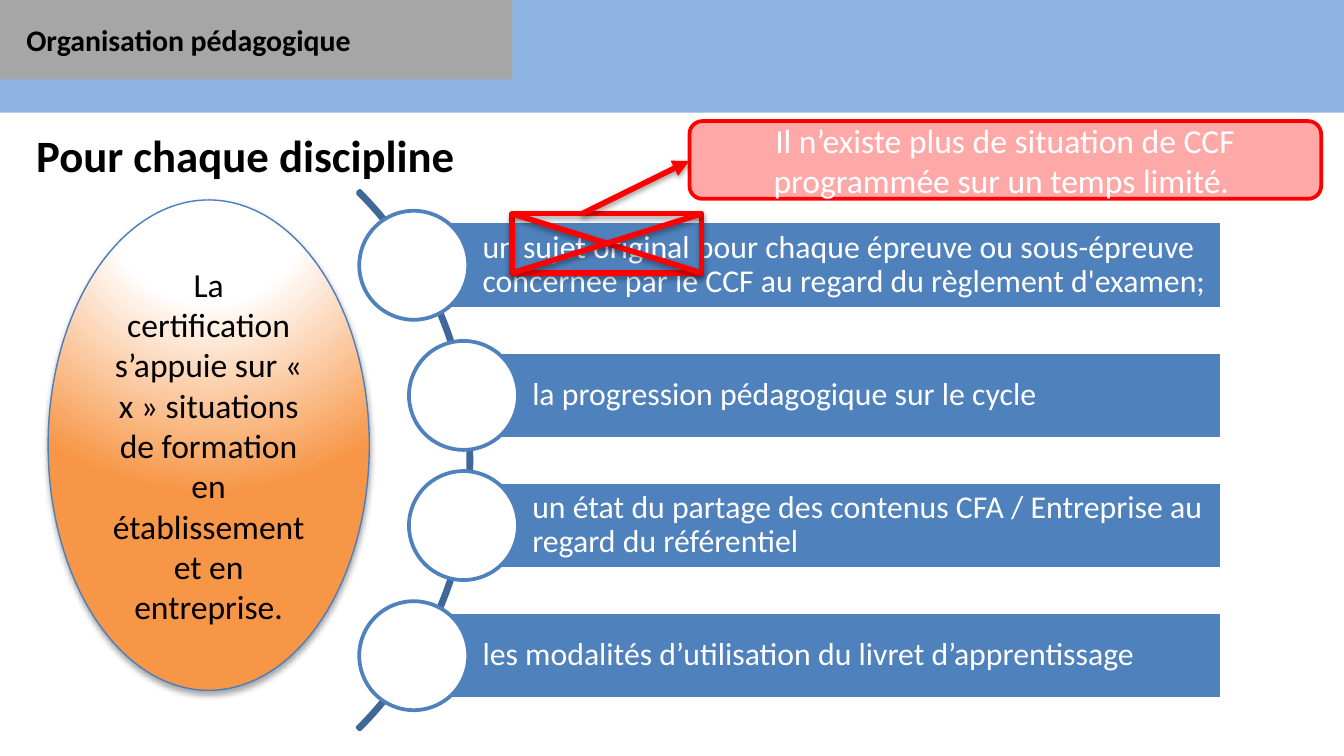
from lxml import etree
from pptx import Presentation
from pptx.dml.color import RGBColor
from pptx.enum.shapes import MSO_CONNECTOR, MSO_SHAPE
from pptx.enum.text import MSO_ANCHOR, MSO_AUTO_SIZE, PP_ALIGN
from pptx.oxml.ns import qn
from pptx.util import Cm, Pt

RECT, ROUNDED = MSO_SHAPE.RECTANGLE, MSO_SHAPE.ROUNDED_RECTANGLE
OVAL, ARC = MSO_SHAPE.OVAL, MSO_SHAPE.BLOCK_ARC
STRAIGHT = MSO_CONNECTOR.STRAIGHT
TOP, MIDDLE = MSO_ANCHOR.TOP, MSO_ANCHOR.MIDDLE
LEFT, CENTER = PP_ALIGN.LEFT, PP_ALIGN.CENTER

BLACK = RGBColor(0x00, 0x00, 0x00)
WHITE = RGBColor(0xFF, 0xFF, 0xFF)
RED = RGBColor(0xFF, 0x00, 0x00)
GREY = RGBColor(0xA6, 0xA6, 0xA6)
SKY = RGBColor(0x8E, 0xB4, 0xE3)
BLUE = RGBColor(0x4F, 0x81, 0xBD)
ARC_BLUE = RGBColor(0x3F, 0x67, 0x97)
OVAL_BLUE = RGBColor(0x4B, 0x7E, 0xBC)
PALE_ORANGE = RGBColor(0xFE, 0xF1, 0xE7)
ORANGE = RGBColor(0xF7, 0x96, 0x46)


def child(parent, tag, **attributes):
    values = {name: str(value) for name, value in attributes.items()}
    return etree.SubElement(parent, qn(tag), values)


class SlideBuilder:
    font = "Calibri"

    def __init__(self, slide):
        self.slide = slide

    def add_text(self, frame, text, size, color, bold=False, align=LEFT,
                 anchor=TOP, wrap=True, spacing=None):
        frame.auto_size = MSO_AUTO_SIZE.NONE
        frame.word_wrap = wrap
        frame.vertical_anchor = anchor
        paragraph = frame.paragraphs[0]
        paragraph.alignment = align
        if spacing:
            paragraph.line_spacing = spacing
        run = paragraph.add_run()
        run.text = text
        run.font.name, run.font.size = self.font, Pt(size)
        run.font.bold, run.font.color.rgb = bold, color

    def title(self, text, left, top, width, height):
        title = self.slide.shapes.title
        title.left, title.top = Cm(left), Cm(top)
        title.width, title.height = Cm(width), Cm(height)
        self.add_text(title.text_frame, text, 24, BLACK, bold=True)

    def label(self, text, left, top, width, height):
        box = self.slide.shapes.add_textbox(Cm(left), Cm(top), Cm(width), Cm(height))
        self.add_text(box.text_frame, text, 16, BLACK, bold=True, wrap=False)

    def shape(self, kind, left, top, width, height, fill=None, line=None, weight=2):
        shape = self.slide.shapes.add_shape(
            kind, Cm(left), Cm(top), Cm(width), Cm(height))
        shape.shadow.inherit = False
        if fill is None:
            shape.fill.background()
        else:
            shape.fill.solid()
            shape.fill.fore_color.rgb = fill
        if line is None:
            shape.line.fill.background()
        else:
            shape.line.color.rgb, shape.line.width = line, Pt(weight)
        return shape

    def line(self, x1, y1, x2, y2, arrow=False):
        line = self.slide.shapes.add_connector(STRAIGHT, Cm(x1), Cm(y1), Cm(x2), Cm(y2))
        line.line.color.rgb, line.line.width = RED, Pt(3)
        properties = line._element.spPr
        if arrow:
            child(properties.find(qn("a:ln")), "a:tailEnd", type="triangle")
        child(properties, "a:effectLst")
        self.shadow(line, 38, 1.6)

    def shadow(self, shape, opacity=35, distance=1.8):
        effects = shape._element.spPr.find(qn("a:effectLst"))
        shadow = child(effects, "a:outerShdw", blurRad=Pt(3.1), dist=Pt(distance),
                       dir=90 * 60000, rotWithShape=0)
        color = child(shadow, "a:srgbClr", val=BLACK)
        child(color, "a:alpha", val=opacity * 1000)

    def transparency(self, shape, opacity):
        color = shape._element.spPr.find(qn("a:solidFill")).find(qn("a:srgbClr"))
        child(color, "a:alpha", val=opacity * 1000)

    def radial_fill(self, shape, stops):
        """Spread the stops from a centre well above the shape."""
        properties = shape._element.spPr
        gradient = child(properties, "a:gradFill", rotWithShape=1)
        stop_list = child(gradient, "a:gsLst")
        for position, color in stops:
            stop = child(stop_list, "a:gs", pos=position * 1000)
            child(stop, "a:srgbClr", val=color)
        circle = child(gradient, "a:path", path="circle")
        child(circle, "a:fillToRect", l=50000, t=-80000, r=50000, b=180000)
        properties.replace(properties.find(qn("a:noFill")), gradient)

    def step(self, text, left, top):
        """Draw a bar with its text and the circle centred on its left end."""
        right, height, diameter = 23.09, 1.65, 2.06
        bar = self.shape(RECT, left, top, right - left, height, BLUE, WHITE)
        frame = bar.text_frame
        frame.margin_left = Cm(1.3)
        frame.margin_right = frame.margin_top = frame.margin_bottom = Cm(0.12)
        self.add_text(frame, text, 17, WHITE, anchor=MIDDLE, spacing=0.9)
        self.shape(OVAL, left - diameter / 2, top + (height - diameter) / 2,
                   diameter, diameter, WHITE, BLUE)


def main():
    deck = Presentation()
    deck.slide_width, deck.slide_height = Cm(25.4), Cm(14.29)
    page = SlideBuilder(deck.slides.add_slide(deck.slide_layouts[5]))

    page.shape(RECT, 0, 0, 25.4, 2.13, SKY)
    page.shape(RECT, 0, 0, 9.68, 1.5, GREY)
    page.label("Organisation pédagogique", 0.25, 0.28, 6.73, 0.94)
    page.title("Pour chaque discipline", 0.43, 2.29, 23.77, 1.27)

    arc = page.shape(ARC, -5.49, 1.5, 14.4, 14.4, line=ARC_BLUE)
    for index, value in enumerate((189, 27, 0.004)):
        arc.adjustments[index] = value

    outer, inner = 7.82, 8.76
    steps = (
        (outer, "un sujet original pour chaque épreuve ou sous-épreuve "
                "concernée par le CCF au regard du règlement d'examen;"),
        (inner, "la progression pédagogique sur le cycle"),
        (inner, "un état du partage des contenus CFA / Entreprise au "
                "regard du référentiel"),
        (outer, "les modalités d’utilisation du livret d’apprentissage"),
    )
    for row, (left, text) in enumerate(steps):
        page.step(text, left, 4.19 + 2.46 * row)

    left, top, width, height = 9.68, 4.04, 3.58, 1.12
    right, bottom = left + width, top + height
    strike_frame = page.shape(RECT, left, top, width, height, line=RED, weight=3)
    page.shadow(strike_frame)
    page.line(left, top, right, bottom)
    page.line(left, bottom, right, top)

    callout = page.shape(ROUNDED, 13.03, 2.29, 11.94, 1.47, RED, RED)
    page.transparency(callout, 34)
    page.add_text(callout.text_frame,
                  "Il n’existe plus de situation de CCF programmée sur un temps limité. ",
                  18, WHITE, align=CENTER, anchor=MIDDLE)
    page.line(11, top, 13.03, 3.04, arrow=True)

    certification = page.shape(OVAL, 0.91, 3.78, 6.07, 9.27, line=OVAL_BLUE, weight=0.75)
    page.radial_fill(certification,
                     ((0, WHITE), (35, WHITE), (43, PALE_ORANGE), (100, ORANGE)))
    page.shadow(certification)
    page.add_text(certification.text_frame,
                  "La certification s’appuie sur « x » situations de formation "
                  "en établissement et en entreprise.",
                  18, BLACK, align=CENTER, anchor=MIDDLE)

    deck.save("out.pptx")


if __name__ == "__main__":
    main()
